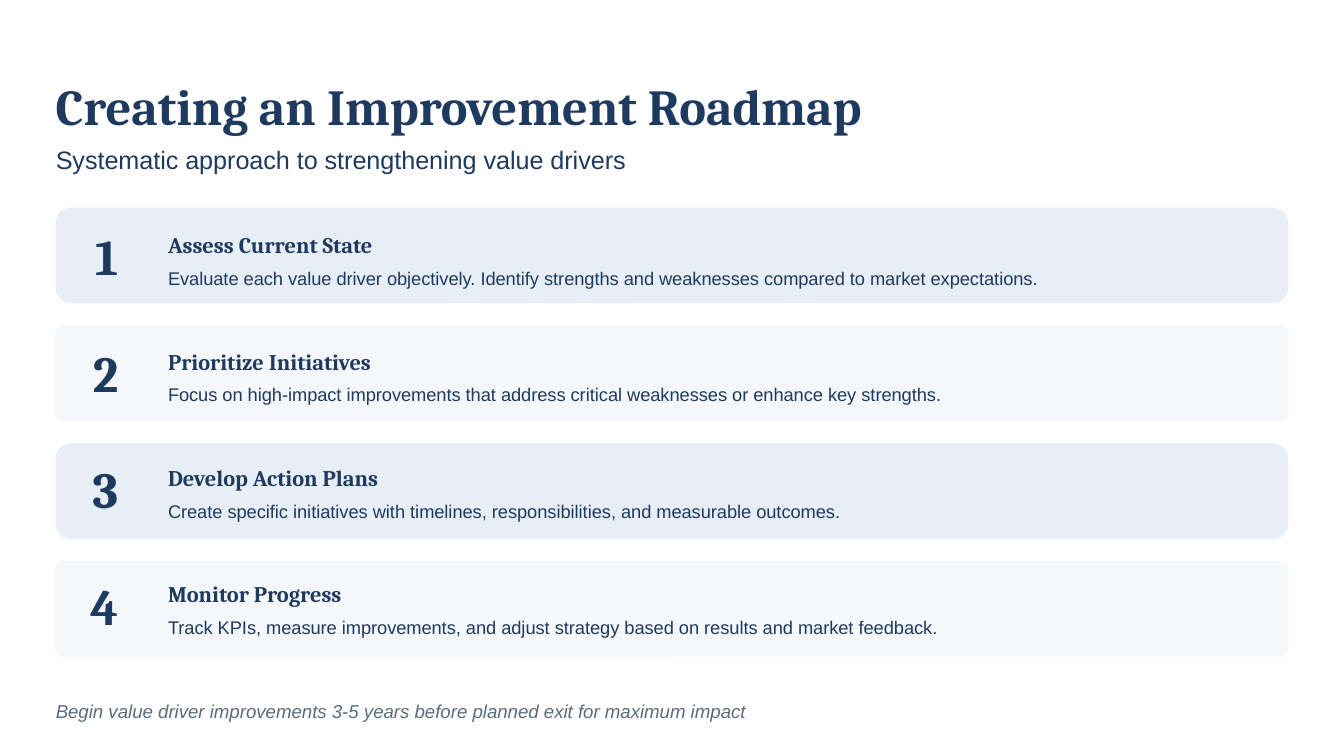
import dataclasses

import pptx
import pptx.dml.color
import pptx.enum.shapes
import pptx.enum.text
import pptx.util


@dataclasses.dataclass(frozen=True)
class TextStyle:
    """Type settings of one kind of text."""
    font: str
    size: float
    line: float
    color: str = "1E3A5F"
    bold: bool = False
    italic: bool = False
    after: float = 0


@dataclasses.dataclass(frozen=True)
class Theme:
    """Colours, corners and type of the deck."""
    background: str = "FFFFFF"
    card_fills: tuple = ("E8EEF5", "F5F7FA")
    card_corners: tuple = (0.155, 0.059)
    title: TextStyle = TextStyle("Cambria", 27, 30, bold=True, after=6)
    subtitle: TextStyle = TextStyle("Arial", 13.5, 21, after=9)
    heading: TextStyle = TextStyle("Cambria", 12, 14.4, bold=True, after=3)
    body: TextStyle = TextStyle("Arial", 9.75, 13.65)
    note: TextStyle = TextStyle("Arial", 10, 14, "5A6C7D", italic=True)


@dataclasses.dataclass(frozen=True)
class Box:
    """An area in cells of the slide grid."""
    left: float
    top: float
    width: float
    height: float

    def inside(self, left, top, width, height):
        """Return a box offset from this one's corner."""
        return Box(self.left + left, self.top + top, width, height)

    def lengths(self):
        """Return left, top, width and height as slide lengths."""
        cells = (self.left, self.top, self.width, self.height)
        return [pptx.util.Inches(cell / CELLS_PER_INCH) for cell in cells]


CELLS_PER_INCH = 100
COLUMNS = 1000
ROWS = COLUMNS * 9 / 16
THEME = Theme()
STEPS = (
    ("Assess Current State",
     "Evaluate each value driver objectively. Identify strengths and weaknesses "
     "compared to market expectations."),
    ("Prioritize Initiatives",
     "Focus on high-impact improvements that address critical weaknesses "
     "or enhance key strengths."),
    ("Develop Action Plans",
     "Create specific initiatives with timelines, responsibilities, "
     "and measurable outcomes."),
    ("Monitor Progress",
     "Track KPIs, measure improvements, and adjust strategy based on results "
     "and market feedback."),
)


def rgb(color):
    """Turn a hex string into a colour."""
    return pptx.dml.color.RGBColor.from_string(color)


def add_text(slide, box, text, style, align=pptx.enum.text.PP_ALIGN.LEFT):
    """Place one styled paragraph in a box without margins."""
    frame = slide.shapes.add_textbox(*box.lengths()).text_frame
    frame.word_wrap = True
    frame.margin_left = frame.margin_right = 0
    frame.margin_top = frame.margin_bottom = 0
    paragraph = frame.paragraphs[0]
    paragraph.alignment = align
    paragraph.line_spacing = pptx.util.Pt(style.line)
    paragraph.space_after = pptx.util.Pt(style.after)
    run = paragraph.add_run()
    run.text = text
    run.font.name = style.font
    run.font.size = pptx.util.Pt(style.size)
    run.font.bold = style.bold
    run.font.italic = style.italic
    run.font.color.rgb = rgb(style.color)


def add_header(slide, box):
    """Place the title above the subtitle."""
    add_text(slide, box.inside(0, 0, 804, 42),
             "Creating an Improvement Roadmap", THEME.title)
    add_text(slide, box.inside(0, 42, box.width, 29),
             "Systematic approach to strengthening value drivers", THEME.subtitle)


def add_card(slide, box, index):
    """Place one rounded card in the alternating style."""
    card = slide.shapes.add_shape(
        pptx.enum.shapes.MSO_SHAPE.ROUNDED_RECTANGLE, *box.lengths())
    card.shadow.inherit = False
    card.adjustments[0] = THEME.card_corners[index % 2]
    card.fill.solid()
    card.fill.fore_color.rgb = rgb(THEME.card_fills[index % 2])
    card.line.fill.background()


def add_step(slide, box, number, heading, description):
    """Place the number, heading and description of a step."""
    add_text(slide, box.inside(0, 0, 46.5, 29), str(number), THEME.title,
             pptx.enum.text.PP_ALIGN.RIGHT)
    add_text(slide, box.inside(83.5, 1, 792, 19), heading, THEME.heading)
    add_text(slide, box.inside(83.5, 25, 792, 18), description, THEME.body)


def add_roadmap(slide, box):
    """Stack the cards evenly and lay the steps over them."""
    card_height, text_top, text_span = 71, 16.5, 260
    gaps = len(STEPS) - 1
    card_pitch = (box.height - card_height) / gaps
    text_pitch = text_span / gaps
    for index, (heading, description) in enumerate(STEPS):
        add_card(slide, box.inside(0, index * card_pitch, box.width, card_height), index)
        text_box = box.inside(0, text_top + index * text_pitch, box.width, card_height)
        add_step(slide, text_box, index + 1, heading, description)


def add_note(slide, box):
    """Place the closing advice."""
    add_text(slide, box,
             "Begin value driver improvements 3-5 years before planned exit "
             "for maximum impact", THEME.note)


def main():
    """Build and save the presentation."""
    presentation = pptx.Presentation()
    page = Box(0, 0, COLUMNS, ROWS)
    presentation.slide_width, presentation.slide_height = page.lengths()[2:]
    slide = presentation.slides.add_slide(presentation.slide_layouts[6])
    slide.background.fill.solid()
    slide.background.fill.fore_color.rgb = rgb(THEME.background)
    add_header(slide, page.inside(41.5, 59, 935, 71))
    add_roadmap(slide, page.inside(41.5, 154.5, 917, 334))
    add_note(slide, page.inside(41.5, 518, 935, 19))
    presentation.save("out.pptx")


if __name__ == "__main__":
    main()
